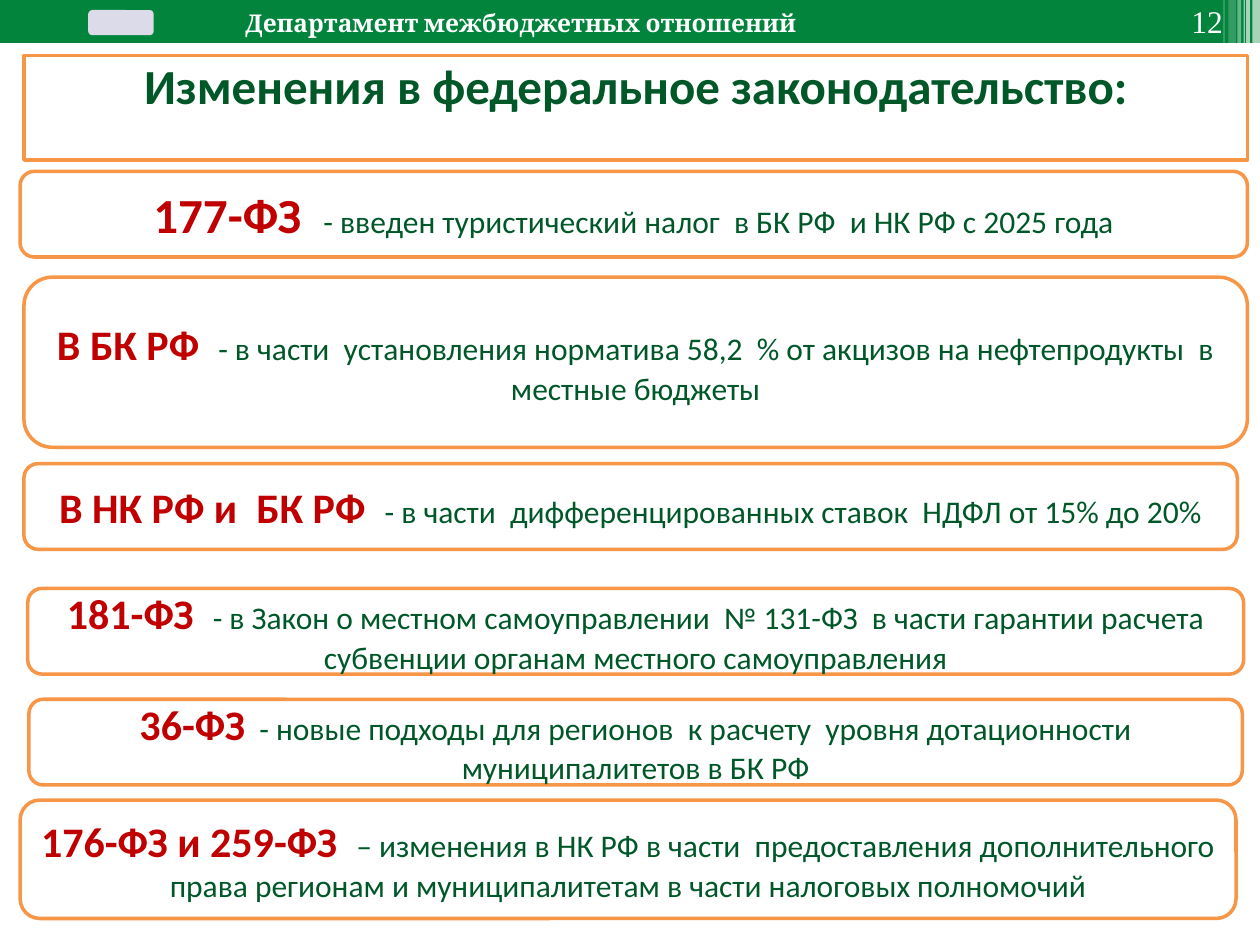
import pptx
import pptx.util
import pptx.dml.color
import pptx.enum.shapes
import pptx.enum.text
import pptx.oxml
import pptx.oxml.ns

Inches = pptx.util.Inches
Pt = pptx.util.Pt
RGBColor = pptx.dml.color.RGBColor
Shape = pptx.enum.shapes.MSO_SHAPE
Align = pptx.enum.text.PP_ALIGN
Anchor = pptx.enum.text.MSO_ANCHOR
Fit = pptx.enum.text.MSO_AUTO_SIZE

WHITE = RGBColor(0xFF, 0xFF, 0xFF)
GREEN = RGBColor(0x02, 0x84, 0x3D)
DARK = RGBColor(0x00, 0x58, 0x28)
RED = RGBColor(0xC0, 0x00, 0x00)
ORANGE = RGBColor(0xF7, 0x96, 0x46)
PALE = RGBColor(0xDB, 0xDB, 0xE9)

BAND = (0, 0, 10, 0.34)
TITLE = (0.19, 0.44, 9.71, 0.83)
STRIPES = [(9.94, 0.06, 65), (9.89, 0.03, 65), (9.87, 0.01, 60),
           (9.82, 0.03, 40), (9.75, 0.06, 20), (9.71, 0.01, 30)]
LAWS = [
    ((0.16, 1.36, 9.74, 0.68), 28, "177-ФЗ  ",
     "- введен туристический налог  в БК РФ  и НК РФ с 2025 года"),
    ((0.19, 2.2, 9.71, 1.35), 24, "В БК РФ  ",
     "- в части  установления норматива 58,2  % от акцизов на "
     "нефтепродукты  в местные бюджеты"),
    ((0.19, 3.68, 9.63, 0.68), 24, "В НК РФ и  БК РФ  ",
     "- в части  дифференцированных ставок  НДФЛ от 15% до 20%"),
    ((0.22, 4.67, 9.65, 0.68), 24, "181-ФЗ  ",
     "- в Закон о местном самоуправлении  № 131-ФЗ  в части гарантии "
     "расчета субвенции органам местного самоуправления"),
    ((0.23, 5.55, 9.63, 0.68), 24, "36-ФЗ",
     "  - новые подходы для регионов  к расчету  уровня дотационности "
     "муниципалитетов в БК РФ"),
    ((0.16, 6.35, 9.65, 0.94), 24, "176-ФЗ и 259-ФЗ  ",
     "– изменения в НК РФ в части  предоставления дополнительного права "
     "регионам и муниципалитетам в части налоговых полномочий"),
]


def add_run(para, text, size, color, bold=False, font="Calibri"):
    """Add one formatted run to a paragraph."""
    run = para.add_run()
    run.text = text
    run.font.size = Pt(size)
    run.font.name = font
    run.font.bold = bold
    run.font.color.rgb = color


def add_block(slide, kind, box, color, alpha=100):
    """Add a flat filled shape without outline or shadow."""
    block = slide.shapes.add_shape(kind, *map(Inches, box))
    block.shadow.inherit = False
    block.fill.solid()
    block.fill.fore_color.rgb = color
    block.line.fill.background()
    if alpha < 100:
        tint = block.fill._xPr.find(".//" + pptx.oxml.ns.qn("a:srgbClr"))
        tint.append(pptx.oxml.parse_xml(
            f'<a:alpha {pptx.oxml.ns.nsdecls("a")} val="{alpha * 1000}"/>'))
    return block


def add_label(slide, box, text, size, font, align, bold=False, pad=None):
    """Add a one-line white label."""
    label = slide.shapes.add_textbox(*map(Inches, box))
    frame = label.text_frame
    frame.word_wrap = True
    if pad is not None:
        frame.margin_left = frame.margin_right = Inches(pad)
        frame.margin_top = frame.margin_bottom = Inches(pad)
    else:
        frame.vertical_anchor = Anchor.MIDDLE
    para = frame.paragraphs[0]
    para.alignment = align
    add_run(para, text, size, WHITE, bold, font)


def add_header(slide, box):
    """Draw the green band with its stripes, emblem, name and page number."""
    left, top, width, height = box
    add_block(slide, Shape.RECTANGLE, box, GREEN)
    for start, wide, alpha in STRIPES:
        add_block(slide, Shape.RECTANGLE,
                  (left + start, top, wide, height), WHITE, alpha)
    add_block(slide, Shape.ROUNDED_RECTANGLE,
              (left + 0.7, top + 0.08, 0.52, 0.2), PALE)
    add_label(slide, (left + 9.34, top + 0.02, 0.48, 0.3), "12", 18,
              "Times New Roman", Align.CENTER, pad=0)
    add_label(slide, (left + 1.85, top + 0.01, 6.3, height),
              "Департамент межбюджетных отношений", 14, "Cambria",
              Align.JUSTIFY, bold=True)


def add_frame(shape):
    """Give a shape the white fill and orange outline of the cards."""
    shape.fill.solid()
    shape.fill.fore_color.rgb = WHITE
    shape.line.color.rgb = ORANGE
    shape.line.width = Pt(2)


def add_title(slide, box):
    """Place the title placeholder as a rounded card."""
    title = slide.shapes.title
    title.left, title.top, title.width, title.height = map(Inches, box)
    title._element.spPr.append(pptx.oxml.parse_xml(
        f'<a:prstGeom {pptx.oxml.ns.nsdecls("a")} prst="roundRect">'
        '<a:avLst/></a:prstGeom>'))
    add_frame(title)
    frame = title.text_frame
    frame.auto_size = Fit.NONE
    frame.vertical_anchor = Anchor.TOP
    frame.margin_top = Inches(0)
    para = frame.paragraphs[0]
    para.alignment = Align.CENTER
    add_run(para, "Изменения в федеральное законодательство:", 28, DARK, True)


def add_law(slide, box, size, name, text):
    """Add a card with a red law name and a green summary."""
    card = add_block(slide, Shape.ROUNDED_RECTANGLE, box, WHITE)
    add_frame(card)
    frame = card.text_frame
    frame.word_wrap = True
    frame.vertical_anchor = Anchor.MIDDLE
    para = frame.paragraphs[0]
    para.alignment = Align.CENTER
    add_run(para, name, size, RED, True)
    add_run(para, text, 18, DARK)


def main():
    """Build and save the slide."""
    deck = pptx.Presentation()
    deck.slide_width, deck.slide_height = Inches(10), Inches(7.5)
    slide = deck.slides.add_slide(deck.slide_layouts[5])
    add_header(slide, BAND)
    add_title(slide, TITLE)
    for law in LAWS:
        add_law(slide, *law)
    deck.save("out.pptx")


if __name__ == "__main__":
    main()
